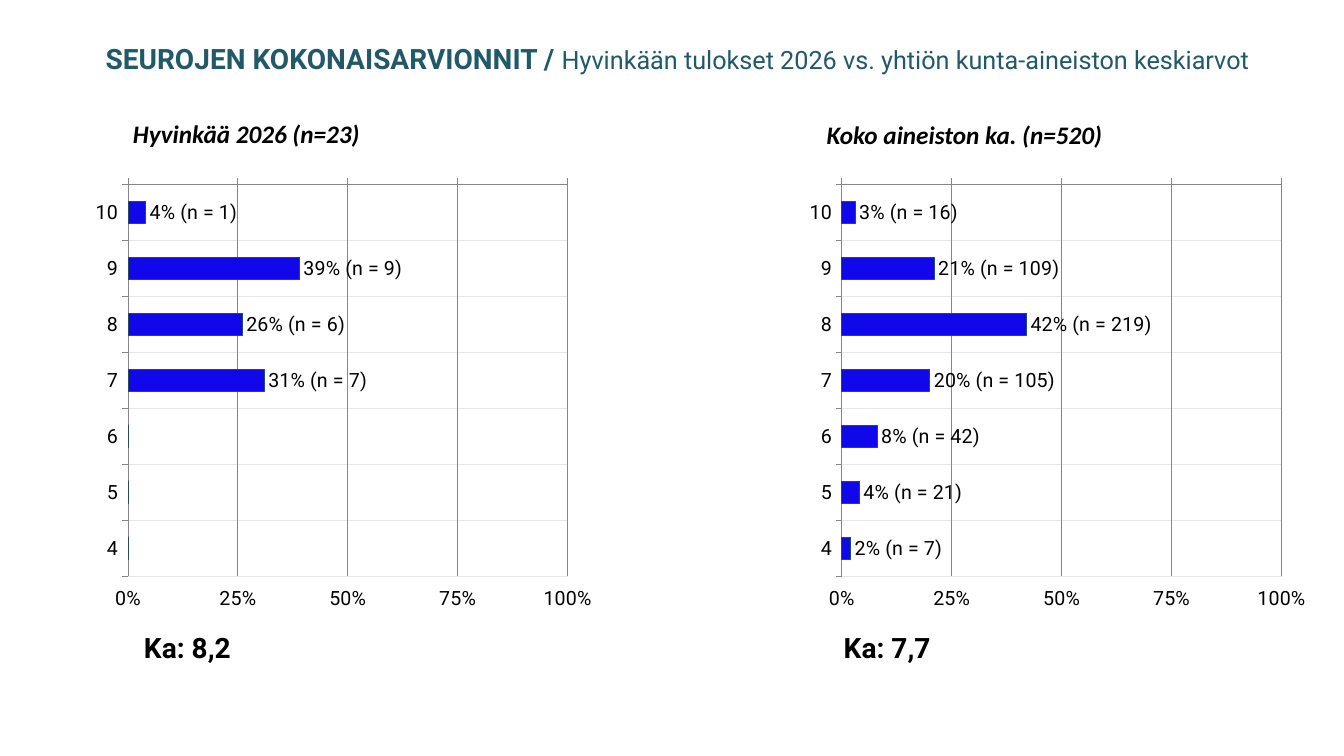
from dataclasses import dataclass

from lxml import etree
from pptx import Presentation
from pptx import util as u
from pptx.chart.data import CategoryChartData
from pptx.dml.color import RGBColor
from pptx.enum import chart as charts
from pptx.oxml import ns

COLORS = {
    "title": "215968",
    "text": "000000",
    "bar": "1207EB",
    "bar_line": "234C5A",
    "axis": "868686",
    "category_grid": "E6E6E6",
}
GRADES = ["10", "9", "8", "7", "6", "5", "4"]
PLOT_LAYOUT = {"x": 0.08, "y": 0.02, "w": 0.85, "h": 0.88}


@dataclass
class Run:
    text: str
    size: int
    font: str = "Roboto"
    color: str = "text"
    bold: bool = True
    italic: bool = False


@dataclass
class TextBox:
    left: float
    top: float
    width: float
    height: float
    runs: list[Run]


@dataclass
class RatingChart:
    left: float
    percents: list[int]
    counts: list[int]


TEXT_BOXES = [
    TextBox(0.95, 0.36, 12.74, 0.44, [
        Run("SEUROJEN KOKONAISARVIONNIT / ", 20, color="title"),
        Run("Hyvinkään tulokset 2026 vs. yhtiön kunta-aineiston keskiarvot", 18,
            color="title", bold=False),
    ]),
    TextBox(1.22, 1.12, 3.05, 0.4, [Run("Hyvinkää 2026 (n=23)", 18, "Calibri", italic=True)]),
    TextBox(8.1, 1.13, 3.51, 0.4, [Run("Koko aineiston ka. (n=520)", 18, "Calibri", italic=True)]),
    TextBox(8.27, 6.21, 1.57, 0.44, [Run("Ka: 7,7", 20)]),
    TextBox(1.33, 6.21, 1.57, 0.44, [Run("Ka: 8,2", 20)]),
]
RATING_CHARTS = [
    RatingChart(7.94, [3, 21, 42, 20, 8, 4, 2], [16, 109, 219, 105, 42, 21, 7]),
    RatingChart(0.86, [4, 39, 26, 31, 0, 0, 0], [1, 9, 6, 7, 0, 0, 0]),
]


def rgb(name: str) -> RGBColor:
    return RGBColor.from_string(COLORS[name])


def set_font(font, run: Run) -> None:
    font.name = run.font
    font.size = u.Pt(run.size)
    font.bold = run.bold
    font.italic = run.italic
    font.color.rgb = rgb(run.color)


def add_run(paragraph, run: Run) -> None:
    text_run = paragraph.add_run()
    text_run.text = run.text
    set_font(text_run.font, run)


def draw_text_box(slide, box: TextBox) -> None:
    shape = slide.shapes.add_textbox(
        u.Inches(box.left), u.Inches(box.top), u.Inches(box.width), u.Inches(box.height))
    shape.text_frame.word_wrap = True
    for run in box.runs:
        add_run(shape.text_frame.paragraphs[0], run)


def set_line(line, color: str) -> None:
    line.color.rgb = rgb(color)
    line.width = u.Pt(0.75)


def set_axis(axis, grid_color: str) -> None:
    axis.has_major_gridlines = True
    set_line(axis.major_gridlines.format.line, grid_color)
    set_line(axis.format.line, "axis")
    axis.major_tick_mark = charts.XL_TICK_MARK.OUTSIDE
    axis.minor_tick_mark = charts.XL_TICK_MARK.NONE


def set_plot_layout(chart) -> None:
    plot_area = chart.plots[0]._element.getparent()
    for old_layout in plot_area.findall(ns.qn("c:layout")):
        plot_area.remove(old_layout)
    layout = etree.Element(ns.qn("c:layout"))
    manual = etree.SubElement(layout, ns.qn("c:manualLayout"))
    settings = {"layoutTarget": "inner", "xMode": "edge", "yMode": "edge", **PLOT_LAYOUT}
    for name, value in settings.items():
        etree.SubElement(manual, ns.qn(f"c:{name}")).set("val", str(value))
    plot_area.insert(0, layout)


def draw_chart(slide, rating: RatingChart) -> None:
    data = CategoryChartData(number_format="0%")
    data.categories = GRADES
    data.add_series("Series 1", [percent / 100 for percent in rating.percents])
    chart = slide.shapes.add_chart(
        charts.XL_CHART_TYPE.BAR_CLUSTERED, u.Inches(rating.left), u.Inches(1.74),
        u.Inches(5.13), u.Inches(4.42), data).chart
    chart.has_legend = False
    chart.has_title = False
    set_font(chart.font, Run("", 14, bold=False))
    set_plot_layout(chart)

    set_axis(chart.category_axis, "category_grid")
    chart.category_axis.reverse_order = True
    chart.category_axis.tick_label_position = charts.XL_TICK_LABEL_POSITION.LOW
    value_axis = chart.value_axis
    set_axis(value_axis, "axis")
    value_axis.minimum_scale = 0
    value_axis.maximum_scale = 1
    value_axis.major_unit = 0.25
    value_axis.tick_label_position = charts.XL_TICK_LABEL_POSITION.HIGH
    value_axis.tick_labels.number_format = "0%"
    value_axis.tick_labels.number_format_is_linked = False

    plot = chart.plots[0]
    plot.gap_width = 150
    plot.vary_by_categories = False
    series = plot.series[0]
    series.format.fill.solid()
    series.format.fill.fore_color.rgb = rgb("bar")
    set_line(series.format.line, "bar_line")
    series.data_labels.show_value = False
    for index, (percent, count) in enumerate(zip(rating.percents, rating.counts)):
        if count:
            label = series.points[index].data_label
            add_run(label.text_frame.paragraphs[0],
                    Run(f"{percent}% (n = {count})", 14, bold=False))
            label.position = charts.XL_LABEL_POSITION.OUTSIDE_END


def main() -> None:
    presentation = Presentation()
    presentation.slide_width = u.Inches(13.33)
    presentation.slide_height = u.Inches(7.5)
    slide = presentation.slides.add_slide(presentation.slide_layouts[6])
    for box in TEXT_BOXES:
        draw_text_box(slide, box)
    for rating in RATING_CHARTS:
        draw_chart(slide, rating)
    presentation.save("out.pptx")


if __name__ == "__main__":
    main()
